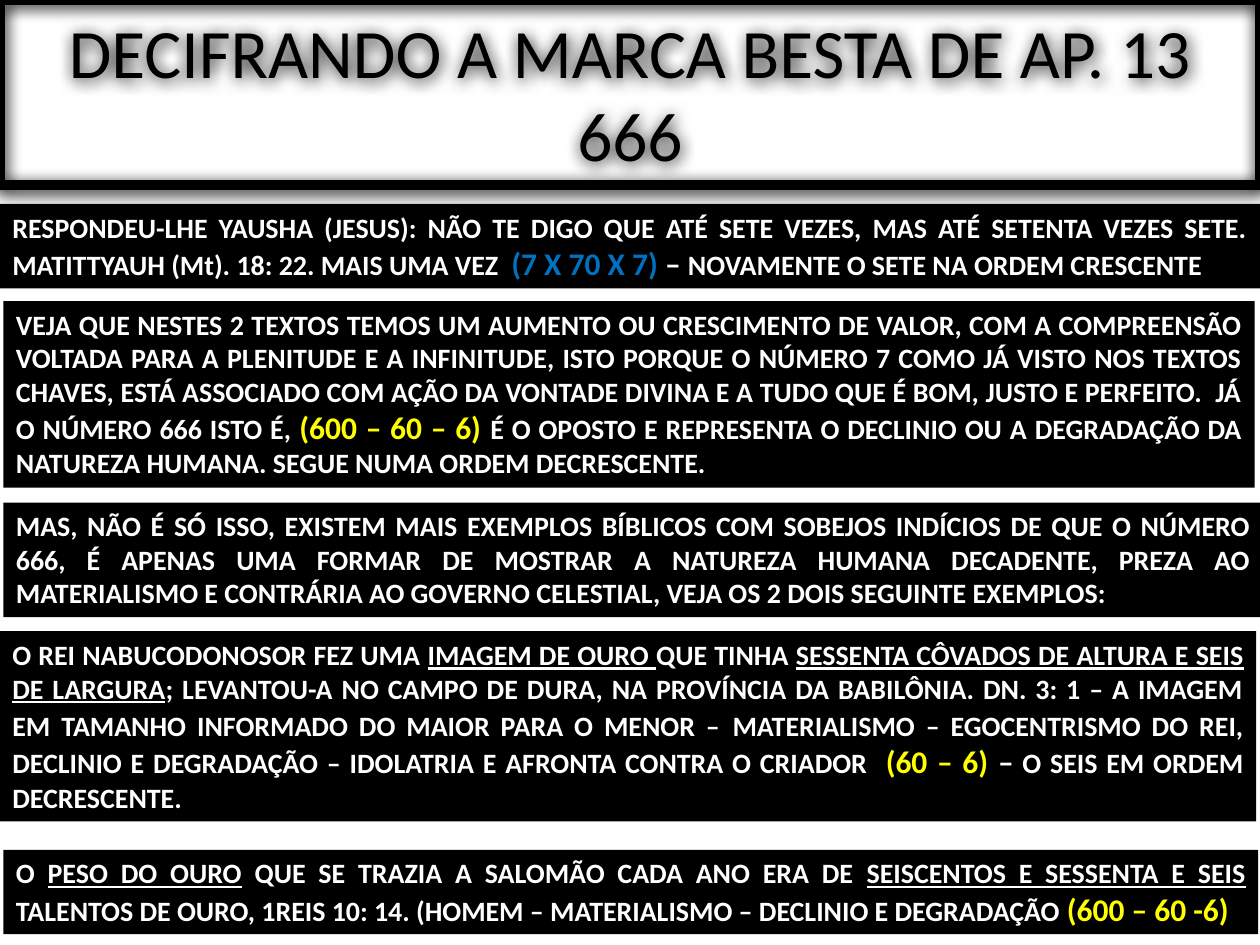
from dataclasses import dataclass

from lxml import etree
from pptx import Presentation
from pptx.dml.color import RGBColor
from pptx.enum.shapes import MSO_SHAPE
from pptx.enum.text import MSO_ANCHOR, MSO_AUTO_SIZE, PP_ALIGN
from pptx.oxml.ns import qn
from pptx.util import Pt

RECTANGLE = MSO_SHAPE.RECTANGLE
MIDDLE, TOP = MSO_ANCHOR.MIDDLE, MSO_ANCHOR.TOP
CENTER, JUSTIFY = PP_ALIGN.CENTER, PP_ALIGN.JUSTIFY
GROW = MSO_AUTO_SIZE.SHAPE_TO_FIT_TEXT


@dataclass(frozen=True)
class Theme:
    font: str = "Calibri"
    black: RGBColor = RGBColor(0, 0, 0)
    white: RGBColor = RGBColor(255, 255, 255)
    blue: RGBColor = RGBColor(0, 112, 192)
    yellow: RGBColor = RGBColor(255, 255, 0)
    title_size: float = 39.6
    body_size: float = 16
    accent_size: float = 18
    frame_width: float = 6


THEME = Theme()


@dataclass(frozen=True)
class Span:
    text: str
    size: float = THEME.body_size
    color: RGBColor = THEME.white
    bold: bool = True
    underline: bool = False


def accent(text, color=THEME.yellow):
    return Span(text, THEME.accent_size, color)


def underlined(text):
    return Span(text, underline=True)


TITLE = Span("DECIFRANDO A MARCA BESTA DE AP. 13 666", THEME.title_size, THEME.black, bold=False)

PANELS = [
    ((0, 116.6, 720, 48.2), [
        Span("RESPONDEU-LHE YAUSHA (JESUS): NÃO TE DIGO QUE ATÉ SETE VEZES, MAS ATÉ "
             "SETENTA VEZES SETE. MATITTYAUH (Mt). 18: 22. MAIS UMA VEZ  "),
        accent("(7 X 70 X 7) ", THEME.blue),
        accent("– ", THEME.white),
        Span("NOVAMENTE O SETE NA ORDEM CRESCENTE"),
    ]),
    ((2, 172.1, 715, 106.6), [
        Span("VEJA QUE NESTES 2 TEXTOS TEMOS UM AUMENTO OU CRESCIMENTO DE VALOR, COM A "
             "COMPREENSÃO VOLTADA PARA A PLENITUDE E A INFINITUDE, ISTO PORQUE O NÚMERO 7 "
             "COMO JÁ VISTO NOS TEXTOS CHAVES, ESTÁ ASSOCIADO COM AÇÃO DA VONTADE DIVINA "
             "E A TUDO QUE É BOM, JUSTO E PERFEITO.  JÁ O NÚMERO 666 ISTO É, "),
        accent("(600 – 60 – 6) "),
        Span("É O OPOSTO E REPRESENTA O DECLINIO OU A DEGRADAÇÃO DA NATUREZA HUMANA. "
             "SEGUE NUMA ORDEM DECRESCENTE."),
    ]),
    ((2, 287.2, 720, 65.5), [
        Span("MAS, NÃO É SÓ ISSO, EXISTEM MAIS EXEMPLOS BÍBLICOS COM SOBEJOS INDÍCIOS DE "
             "QUE O NÚMERO 666, É APENAS UMA FORMAR DE MOSTRAR A NATUREZA HUMANA "
             "DECADENTE, PREZA AO MATERIALISMO E CONTRÁRIA AO GOVERNO CELESTIAL, VEJA OS "
             "2 DOIS SEGUINTE EXEMPLOS:"),
    ]),
    ((0, 360.7, 717.8, 108.7), [
        Span("O REI NABUCODONOSOR FEZ UMA "),
        underlined("IMAGEM DE OURO "),
        Span("QUE TINHA "),
        underlined("SESSENTA CÔVADOS DE ALTURA E SEIS DE LARGURA"),
        Span("; LEVANTOU-A NO CAMPO DE DURA, NA PROVÍNCIA DA BABILÔNIA. DN. 3: 1 – A "
             "IMAGEM EM TAMANHO INFORMADO DO MAIOR PARA O MENOR –"),
        accent(" ", THEME.white),
        Span("MATERIALISMO – EGOCENTRISMO DO REI, DECLINIO E DEGRADAÇÃO – IDOLATRIA E "
             "AFRONTA CONTRA O CRIADOR  "),
        accent("(60 – 6) "),
        accent("–", THEME.white),
        Span(" O SEIS EM ORDEM DECRESCENTE."),
    ]),
    ((2, 485.6, 717, 48.2), [
        Span("O "),
        underlined("PESO DO OURO"),
        Span(" QUE SE TRAZIA A SALOMÃO CADA ANO ERA DE "),
        underlined("SEISCENTOS E SESSENTA E SEIS "),
        Span("TALENTOS DE OURO, 1REIS 10: 14. (HOMEM – MATERIALISMO – DECLINIO E DEGRADAÇÃO "),
        accent("(600 – 60 -6)"),
    ]),
]


def add_box(page, bounds):
    box = page.shapes.add_shape(RECTANGLE, *(Pt(length) for length in bounds))
    box.shadow.inherit = False
    box.text_frame.word_wrap = True
    return box


def write(box, spans, alignment, anchor):
    box.text_frame.vertical_anchor = anchor
    para = box.text_frame.paragraphs[0]
    para.alignment = alignment
    para.font.name = THEME.font
    for span in spans:
        run = para.add_run()
        run.text = span.text
        run.font.size = Pt(span.size)
        run.font.bold = span.bold
        run.font.color.rgb = span.color
        if span.underline:
            run.font.underline = True


def add_outer_shadow(box, blur, distance, angle, color):
    effects = box.element.spPr.find(qn("a:effectLst"))
    shadow = etree.SubElement(effects, qn("a:outerShdw"), blurRad=str(Pt(blur)),
                              dist=str(Pt(distance)), dir=str(angle * 60000),
                              algn="t", rotWithShape="0")
    etree.SubElement(shadow, qn("a:srgbClr"), val=str(color))


def add_title(page):
    box = add_box(page, (0, 0, 720, 105.8))
    box.fill.background()
    box.line.color.rgb = THEME.black
    box.line.width = Pt(THEME.frame_width)
    add_outer_shadow(box, 8.5, 1, 90, THEME.black)
    write(box, [TITLE], CENTER, MIDDLE)


def add_panel(page, bounds, spans):
    box = add_box(page, bounds)
    box.fill.solid()
    box.fill.fore_color.rgb = THEME.black
    box.line.fill.background()
    box.text_frame.auto_size = GROW
    write(box, spans, JUSTIFY, TOP)


def main():
    deck = Presentation()
    deck.slide_width, deck.slide_height = Pt(720), Pt(540)
    page = deck.slides.add_slide(deck.slide_layouts[6])
    add_title(page)
    for bounds, spans in PANELS:
        add_panel(page, bounds, spans)
    deck.save("out.pptx")


if __name__ == "__main__":
    main()
